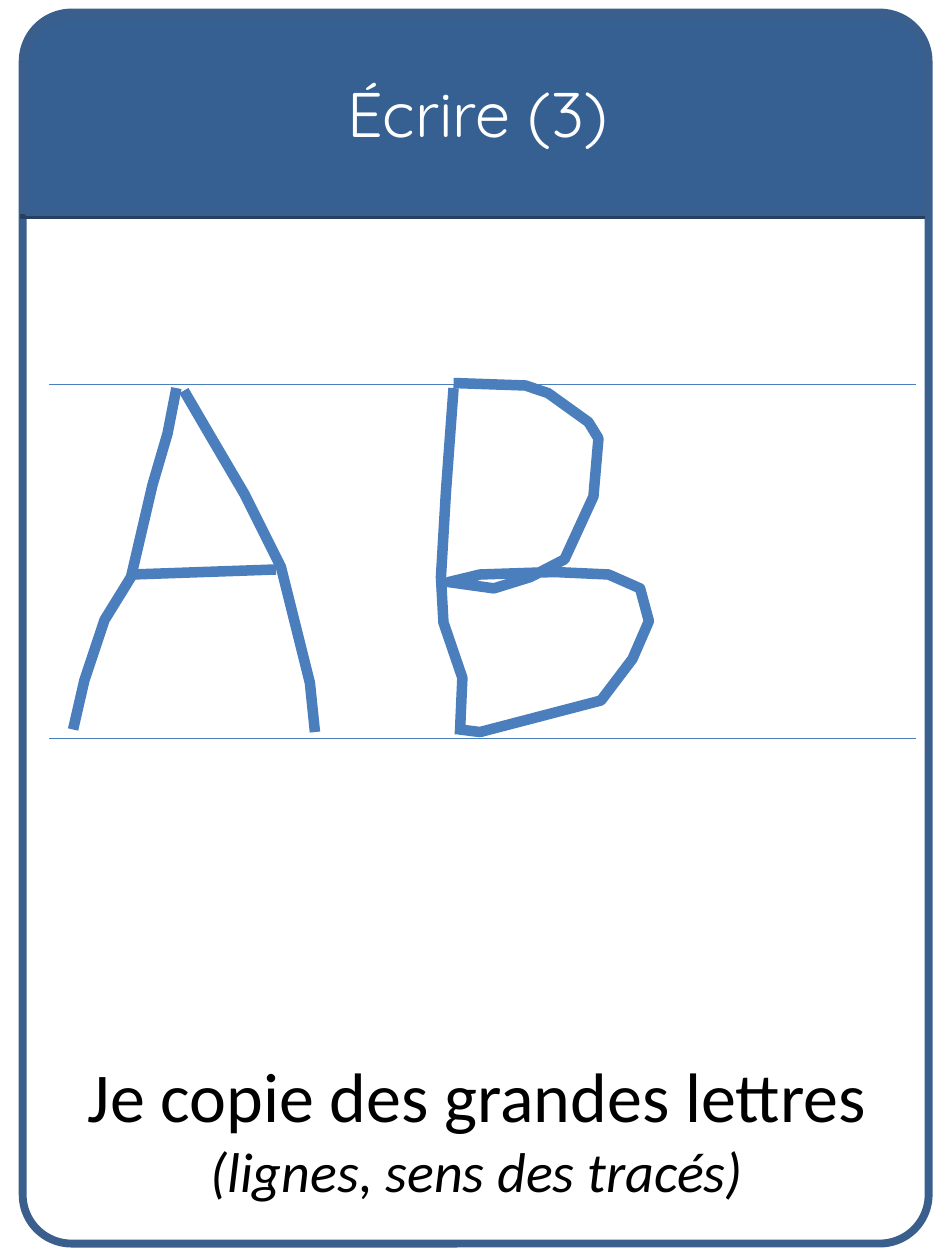
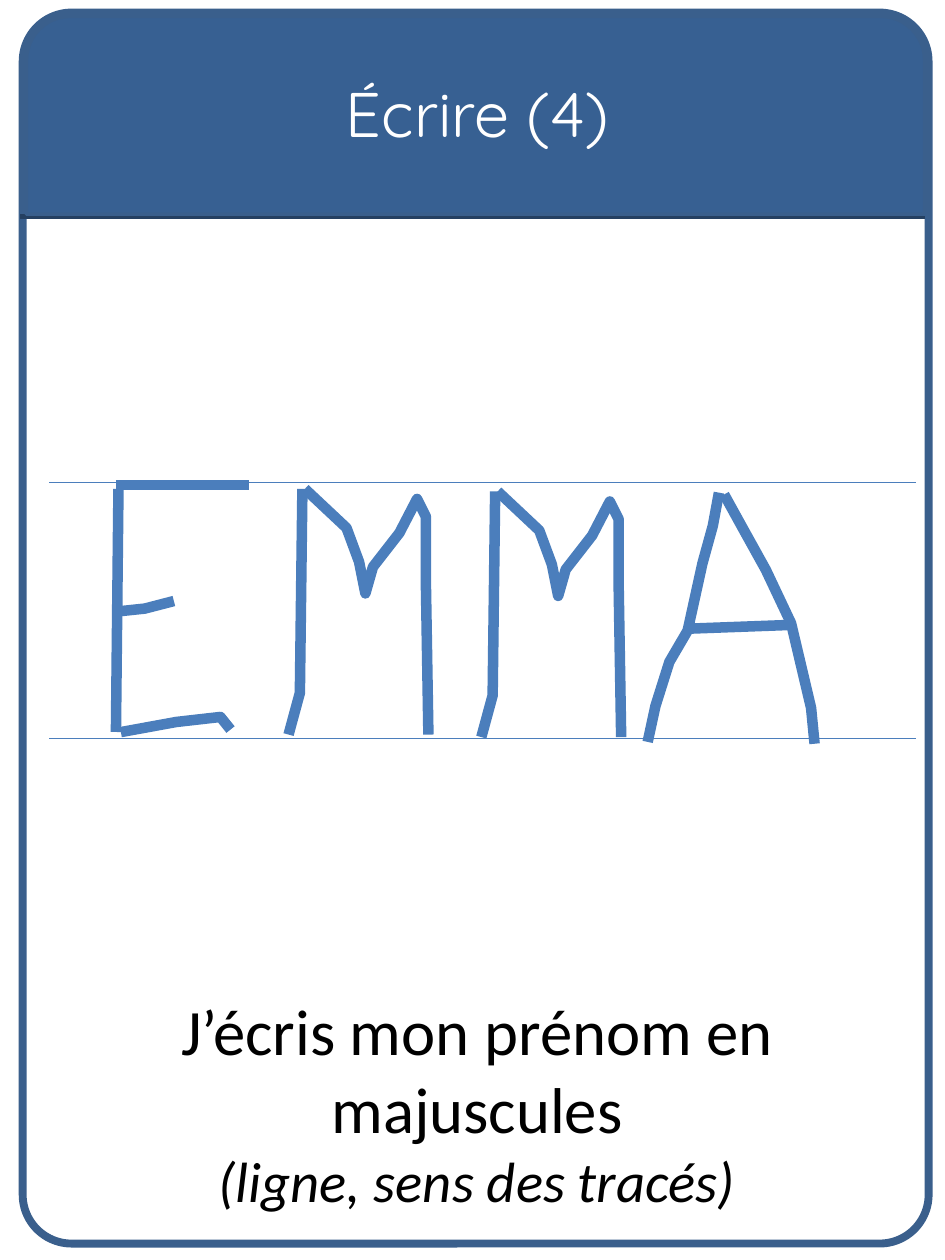
import dataclasses

import lxml.etree
import pptx
import pptx.dml.color
import pptx.enum.shapes
import pptx.enum.text
import pptx.oxml.ns
import pptx.util

Inches = pptx.util.Inches
Pt = pptx.util.Pt
Shape = pptx.enum.shapes.MSO_SHAPE


@dataclasses.dataclass(frozen=True)
class Theme:
    frame: str = "3A5F8C"
    band: str = "376092"
    rule: str = "254061"
    ink: str = "4B7EBC"
    title: str = "FFFFFF"
    text: str = "000000"
    title_font: str = "Quicksand"
    text_font: str = "Calibri"
    title_size: float = 36
    frame_width: float = 4.5
    band_width: float = 2
    rule_width: float = 3
    guide_width: float = 0.75
    stroke_width: float = 6


@dataclasses.dataclass(frozen=True)
class Box:
    left: float
    top: float
    width: float
    height: float

    def edges(self):
        return [Inches(n) for n in (self.left, self.top, self.width, self.height)]


THEME = Theme()
CARD = Box(0.18, 0.1, 7.19, 9.77)
BASELINE = 5.86
CAPTION_BOTTOM = 9.77

# Each letter is a list of strokes, in hundredths of an inch.
LETTERS = {
    "A": [
        [(82, 0), (75, 36), (63, 77), (46, 150), (25, 184), (9, 232), (0, 271)],
        [(88, 2), (109, 38), (136, 84), (165, 142), (188, 234), (192, 273)],
        [(46, 148), (161, 144)],
    ],
    "B": [
        [(10, 4), (4, 86), (0, 154), (2, 190), (17, 234), (15, 279)],
        [(10, 0), (67, 2), (85, 8), (117, 31), (125, 44), (121, 90), (98, 140),
         (71, 154), (42, 163), (6, 158), (31, 152), (90, 150), (133, 152),
         (158, 163), (165, 189), (152, 219), (127, 252), (31, 277), (15, 275)],
    ],
    "E": [
        [(2, 5), (0, 198)],
        [(0, 2), (106, 2)],
        [(4, 102), (23, 100), (46, 94)],
        [(4, 198), (48, 190), (83, 186), (91, 196)],
    ],
    "M": [
        [(11, 0), (9, 162), (0, 195)],
        [(13, 0), (46, 31), (56, 58), (61, 83), (67, 62), (88, 35), (102, 8),
         (109, 22), (109, 74), (111, 195)],
    ],
}

CARDS = [
    {
        "title": "Écrire (3)",
        "top_line": 3.05,
        "letters": [("A", 0.19, 0.03), ("B", 3.11, -0.01)],
        "caption_top": 8.13,
        "caption": [("Je copie des grandes lettres", 40), ("(lignes, sens des tracés)", 32)],
    },
    {
        "title": "Écrire (4)",
        "top_line": 3.83,
        "letters": [("E", 0.53, 0), ("M", 1.9, 0.05), ("M", 3.43, 0.07),
                    ("A", 4.75, 0.08, 0.69, 0.73)],
        "caption_top": 7.73,
        "caption": [("J’écris mon prénom en majuscules", 37), ("(ligne, sens des tracés)", 32.4)],
    },
]


def color(value):
    return pptx.dml.color.RGBColor.from_string(value)


def outline(shape, value, width):
    shape.line.color.rgb = color(value)
    shape.line.width = Pt(width)


def add_line(page, left, right, top, value, width):
    line = page.shapes.add_connector(
        pptx.enum.shapes.MSO_CONNECTOR.STRAIGHT,
        Inches(left), Inches(top), Inches(right), Inches(top))
    outline(line, value, width)
    lxml.etree.SubElement(line.element.spPr, pptx.oxml.ns.qn("a:effectLst"))


def add_panel(page, kind, box, adjustments, width, fill=None):
    panel = page.shapes.add_shape(kind, *box.edges())
    for index, amount in enumerate(adjustments):
        panel.adjustments[index] = amount
    panel.shadow.inherit = False
    outline(panel, THEME.frame, width)
    if fill:
        panel.fill.solid()
        panel.fill.fore_color.rgb = color(fill)
    else:
        panel.fill.background()


def format_text(shape, font, value):
    frame = shape.text_frame
    frame.word_wrap = True
    frame.auto_size = pptx.enum.text.MSO_AUTO_SIZE.NONE
    frame.vertical_anchor = pptx.enum.text.MSO_ANCHOR.MIDDLE
    para = frame.paragraphs[0]
    para.alignment = pptx.enum.text.PP_ALIGN.CENTER
    para.space_before = Pt(7)
    para.font.name = font
    para.font.color.rgb = color(value)
    return para


def add_card_frame(page, box):
    add_panel(page, Shape.ROUNDED_RECTANGLE, box, [0.054], THEME.frame_width)
    add_line(page, box.left - 0.02, box.left + box.width - 0.03, box.top + 1.62,
             THEME.rule, THEME.rule_width)
    band = Box(box.left + 0.03, box.top + 0.03, box.width - 0.06, 1.57)
    add_panel(page, Shape.ROUND_2_SAME_RECTANGLE, band, [0.222, 0],
              THEME.band_width, THEME.band)


def set_title(page, box, text):
    title = page.shapes.title
    title.left, title.top, title.width, title.height = box.edges()
    title.text_frame.text = text
    para = format_text(title, THEME.title_font, THEME.title)
    para.font.size = Pt(THEME.title_size)
    title.element.getparent().append(title.element)


def add_caption(page, box, lines):
    caption = page.shapes.add_textbox(*box.edges())
    para = format_text(caption, THEME.text_font, THEME.text)
    for index, (text, size) in enumerate(lines):
        if index:
            para.add_line_break()
        span = para.add_run()
        span.text = text
        span.font.size = Pt(size)
        span.font.italic = index > 0


def add_letter(page, box, letter, left, top, scale_x=1, scale_y=1):
    unit = Inches(0.01)
    for start, *points in LETTERS[letter]:
        builder = page.shapes.build_freeform(*start, scale=(unit * scale_x, unit * scale_y))
        builder.add_line_segments(points, close=False)
        stroke = builder.convert_to_shape(Inches(box.left + left), Inches(box.top + top))
        stroke.fill.background()
        stroke.shadow.inherit = False
        outline(stroke, THEME.ink, THEME.stroke_width)


def add_writing(page, box, letters):
    for top in (box.top, box.top + box.height):
        add_line(page, box.left, box.left + box.width, top, THEME.ink, THEME.guide_width)
    for letter in letters:
        add_letter(page, box, *letter)


def add_card(deck, card):
    page = deck.slides.add_slide(deck.slide_layouts[5])
    add_card_frame(page, CARD)
    set_title(page, Box(CARD.left + 0.21, CARD.top + 0.13, 6.8, 1.33), card["title"])
    caption_top, top_line = card["caption_top"], card["top_line"]
    add_caption(page, Box(0.31, caption_top, 6.95, CAPTION_BOTTOM - caption_top), card["caption"])
    add_writing(page, Box(0.39, top_line, 6.88, BASELINE - top_line), card["letters"])


def main():
    deck = pptx.Presentation()
    deck.slide_width, deck.slide_height = Inches(7.5), Inches(10)
    for card in CARDS:
        add_card(deck, card)
    deck.save("out.pptx")


if __name__ == "__main__":
    main()
